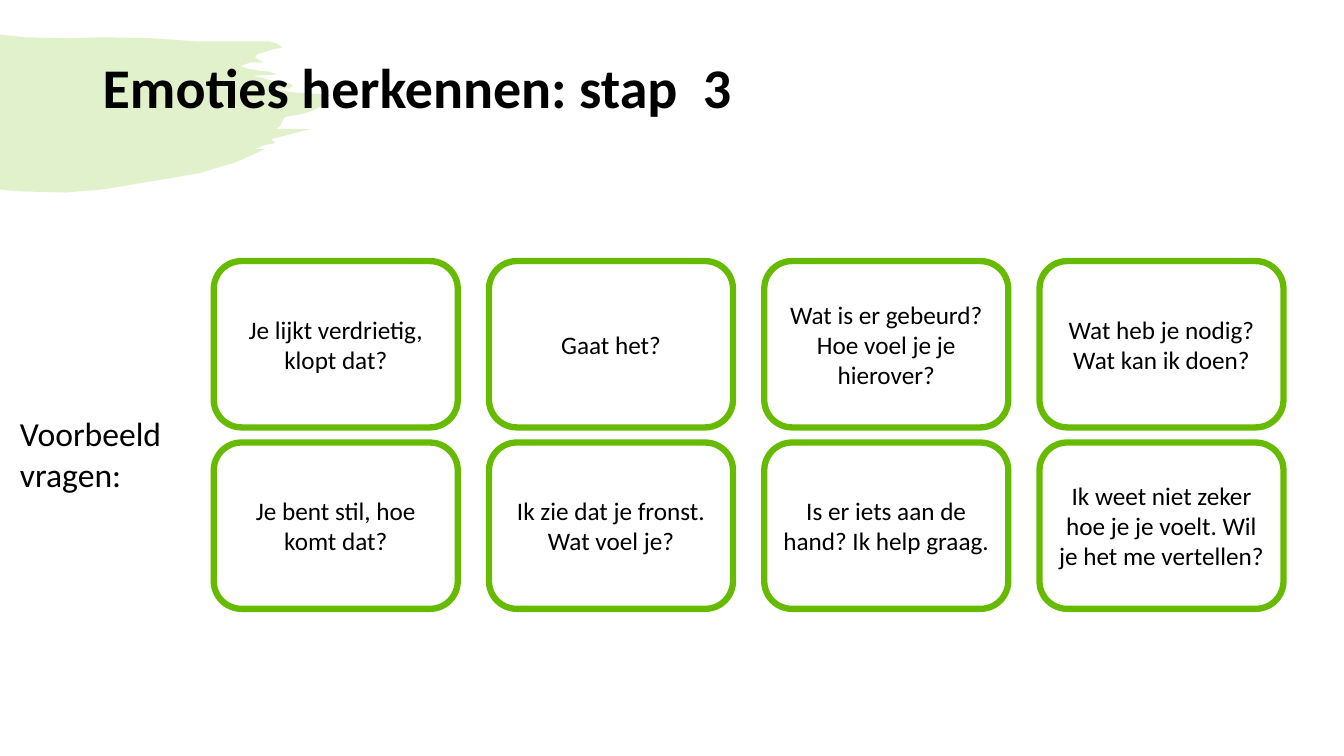
from lxml import etree
from pptx import Presentation
from pptx.dml.color import RGBColor
from pptx.enum.shapes import MSO_SHAPE as SHAPE
from pptx.enum.text import MSO_ANCHOR as ANCHOR, PP_ALIGN as ALIGN
from pptx.oxml.ns import qn
from pptx.util import Inches, Pt

COLORS = {"green": "66BB00", "white": "FFFFFF", "black": "000000"}

BRUSH = [
    (0, 0.34), (0.06, 0.35), (0.25, 0.37), (0.66, 0.38), (1.02, 0.37),
    (1.51, 0.38), (1.94, 0.41), (2.48, 0.41), (2.66, 0.41), (2.74, 0.43),
    (2.8, 0.47), (2.71, 0.49), (2.55, 0.54), (2.53, 0.57), (2.56, 0.59),
    (2.62, 0.62), (2.48, 0.62), (2.38, 0.66), (2.46, 0.68), (2.56, 0.7),
    (2.66, 0.71), (2.75, 0.74), (2.51, 0.75), (2.63, 0.78), (2.73, 0.81),
    (2.8, 0.82), (2.88, 0.83), (2.9, 0.85), (2.87, 0.88), (2.84, 0.88),
    (2.63, 0.88), (2.95, 0.92), (3.3, 0.94), (3.21, 0.97), (3.22, 1.03),
    (3.18, 1.06), (3.07, 1.11), (3, 1.13), (2.83, 1.16), (2.8, 1.2),
    (2.78, 1.25), (2.74, 1.28), (3.08, 1.28), (2.89, 1.33), (2.69, 1.38),
    (2.73, 1.42), (2.62, 1.44), (2.52, 1.48), (2.63, 1.48), (2.34, 1.61),
    (1.97, 1.72), (1.02, 1.88), (0.65, 1.91), (0.23, 1.9), (0.07, 1.89),
    (0, 1.88),
]

QUESTIONS = [
    ["Je lijkt verdrietig, klopt dat?", "Gaat het?",
     "Wat is er gebeurd?\nHoe voel je je hierover?",
     "Wat heb je nodig? Wat kan ik doen?"],
    ["Je bent stil, hoe komt dat?", "Ik zie dat je fronst.\nWat voel je?",
     "Is er iets aan de hand? Ik help graag.",
     "Ik weet niet zeker hoe je je voelt. Wil je het me vertellen?"],
]


def write(sp, text, size, bold=False, align=ALIGN.LEFT, anchor=ANCHOR.MIDDLE, spacing=1.0):
    tf = sp.text_frame
    tf.word_wrap = True
    tf.vertical_anchor = anchor
    for i, line in enumerate(text.split("\n")):
        p = tf.add_paragraph() if i else tf.paragraphs[0]
        p.alignment = align
        p.line_spacing = spacing
        r = p.add_run()
        r.text = line
        r.font.name = "Calibri"
        r.font.size = Pt(size)
        r.font.bold = bold
        r.font.color.rgb = RGBColor.from_string(COLORS["black"])


prs = Presentation()
prs.slide_width = Inches(13.33)
prs.slide_height = Inches(7.5)
s = prs.slides.add_slide(prs.slide_layouts[6])

points = [(Inches(x), Inches(y)) for x, y in BRUSH]
fb = s.shapes.build_freeform(*points[0])
fb.add_line_segments(points[1:], close=True)
brush = fb.convert_to_shape()
brush.shadow.inherit = False
brush.fill.solid()
brush.fill.fore_color.rgb = RGBColor.from_string(COLORS["green"])
brush.line.fill.background()
color = brush.fill._xPr.find(qn("a:solidFill"))[0]
etree.SubElement(color, qn("a:alpha"), val="20000")

title = s.shapes.add_textbox(Inches(0.92), Inches(0.17), Inches(11.81), Inches(1.45))
write(title, "Emoties herkennen: stap  3", 40, bold=True, spacing=0.9)

for row, questions in enumerate(QUESTIONS):
    for col, question in enumerate(questions):
        card = s.shapes.add_shape(
            SHAPE.ROUNDED_RECTANGLE, Inches(2.12 + 2.73 * col),
            Inches(2.59 + 1.8 * row), Inches(2.42), Inches(1.65))
        card.shadow.inherit = False
        card.fill.solid()
        card.fill.fore_color.rgb = RGBColor.from_string(COLORS["white"])
        card.line.color.rgb = RGBColor.from_string(COLORS["green"])
        card.line.width = Pt(4.5)
        write(card, question, 18, align=ALIGN.CENTER)

label = s.shapes.add_textbox(Inches(0.1), Inches(4.05), Inches(2.03), Inches(0.91))
write(label, "Voorbeeld\nvragen:", 24, anchor=ANCHOR.TOP)

prs.save("out.pptx")
